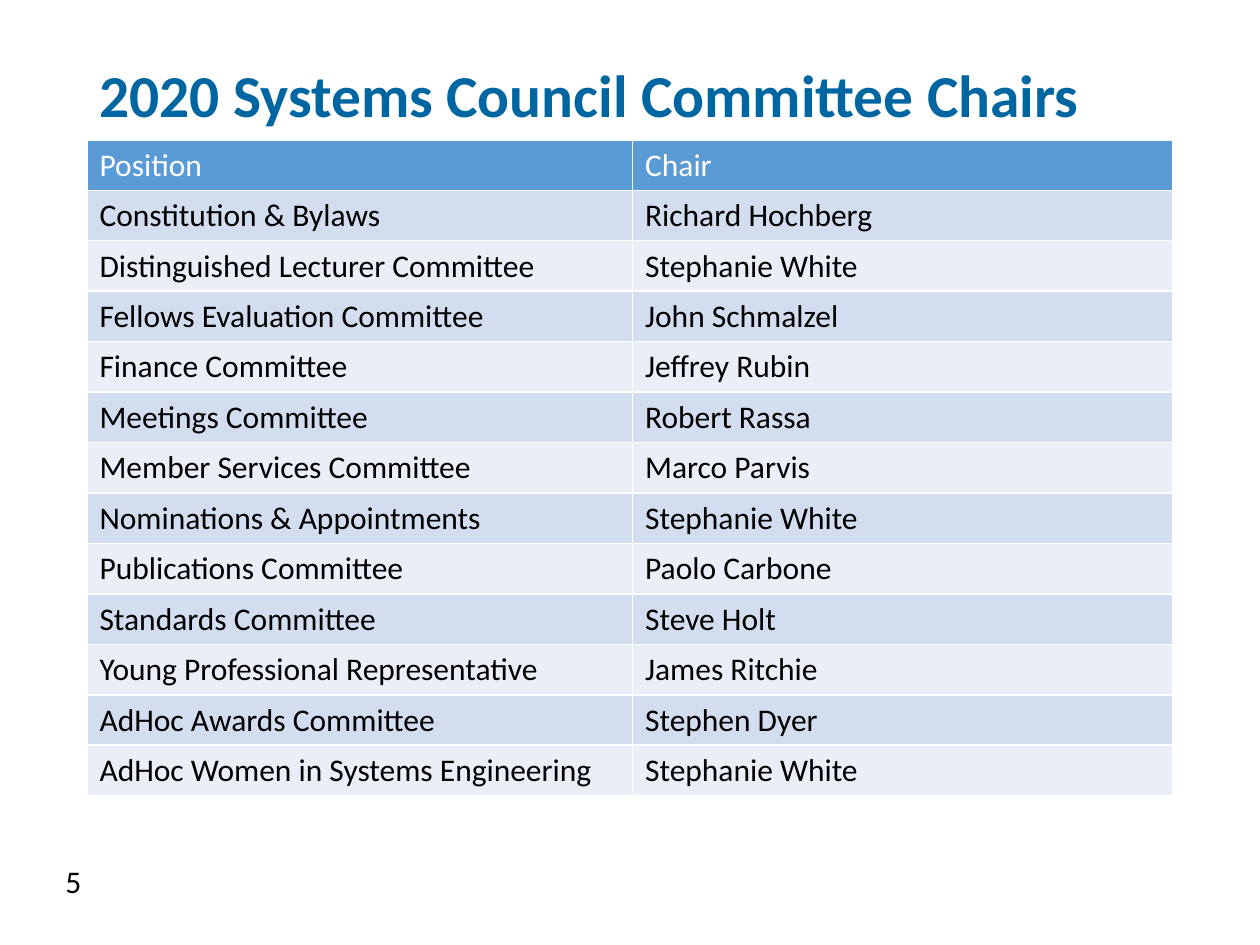
import pptx
import pptx.dml.color
import pptx.enum.text
import pptx.util

Inches = pptx.util.Inches
ANCHOR = pptx.enum.text.MSO_ANCHOR

CHAIRS = [
    ("Position", "Chair"),
    ("Constitution & Bylaws", "Richard Hochberg"),
    ("Distinguished Lecturer Committee", "Stephanie White"),
    ("Fellows Evaluation Committee", "John Schmalzel"),
    ("Finance Committee", "Jeffrey Rubin"),
    ("Meetings Committee", "Robert Rassa"),
    ("Member Services Committee", "Marco Parvis"),
    ("Nominations & Appointments", "Stephanie White"),
    ("Publications Committee", "Paolo Carbone"),
    ("Standards Committee", "Steve Holt"),
    ("Young Professional Representative", "James Ritchie"),
    ("AdHoc Awards Committee", "Stephen Dyer"),
    ("AdHoc Women in Systems Engineering", "Stephanie White"),
]


def color(value):
    return pptx.dml.color.RGBColor.from_string(value)


def format_text(text_frame, size, value, bold=False):
    for paragraph in text_frame.paragraphs:
        for run in paragraph.runs:
            run.font.name = "Calibri"
            run.font.size = pptx.util.Pt(size)
            run.font.bold = bold
            run.font.color.rgb = color(value)


def add_text(slide, box, text, size, value, bold=False, anchor=ANCHOR.TOP):
    text_frame = slide.shapes.add_textbox(*box).text_frame
    text_frame.word_wrap = True
    text_frame.vertical_anchor = anchor
    text_frame.text = text
    format_text(text_frame, size, value, bold)
    return text_frame


def add_title(slide, box):
    text_frame = add_text(slide, box, "2020 Systems Council Committee Chairs",
                          34, "0066A1", True, ANCHOR.BOTTOM)
    text_frame.paragraphs[0].line_spacing = 0.9


def add_chairs_table(slide, box):
    table = slide.shapes.add_table(len(CHAIRS), 2, *box).table
    table.columns[0].width = Inches(4.33)
    table.columns[1].width = box[2] - Inches(4.33)
    for row_index, row in enumerate(CHAIRS):
        if row_index == 0:
            fill, text_color = "5B9BD5", "FFFFFF"
        else:
            fill, text_color = ("EAEFF7", "D2DEEF")[row_index % 2], "000000"
        for column_index, text in enumerate(row):
            cell = table.cell(row_index, column_index)
            cell.fill.solid()
            cell.fill.fore_color.rgb = color(fill)
            cell.text_frame.text = text
            format_text(cell.text_frame, 18, text_color)


def add_page_number(slide, box):
    add_text(slide, box, "5", 18, "000000")


def main():
    presentation = pptx.Presentation()
    presentation.slide_width = Inches(10)
    presentation.slide_height = Inches(7.5)
    slide = presentation.slides.add_slide(presentation.slide_layouts[6])
    left, width = Inches(0.69), Inches(8.62)
    add_title(slide, (left, Inches(0.47), width, Inches(0.61)))
    add_chairs_table(slide, (left, Inches(1.11), width, Inches(5.2)))
    add_page_number(slide, (Inches(0.42), Inches(6.79), Inches(0.53), Inches(0.4)))
    presentation.save("out.pptx")


if __name__ == "__main__":
    main()
